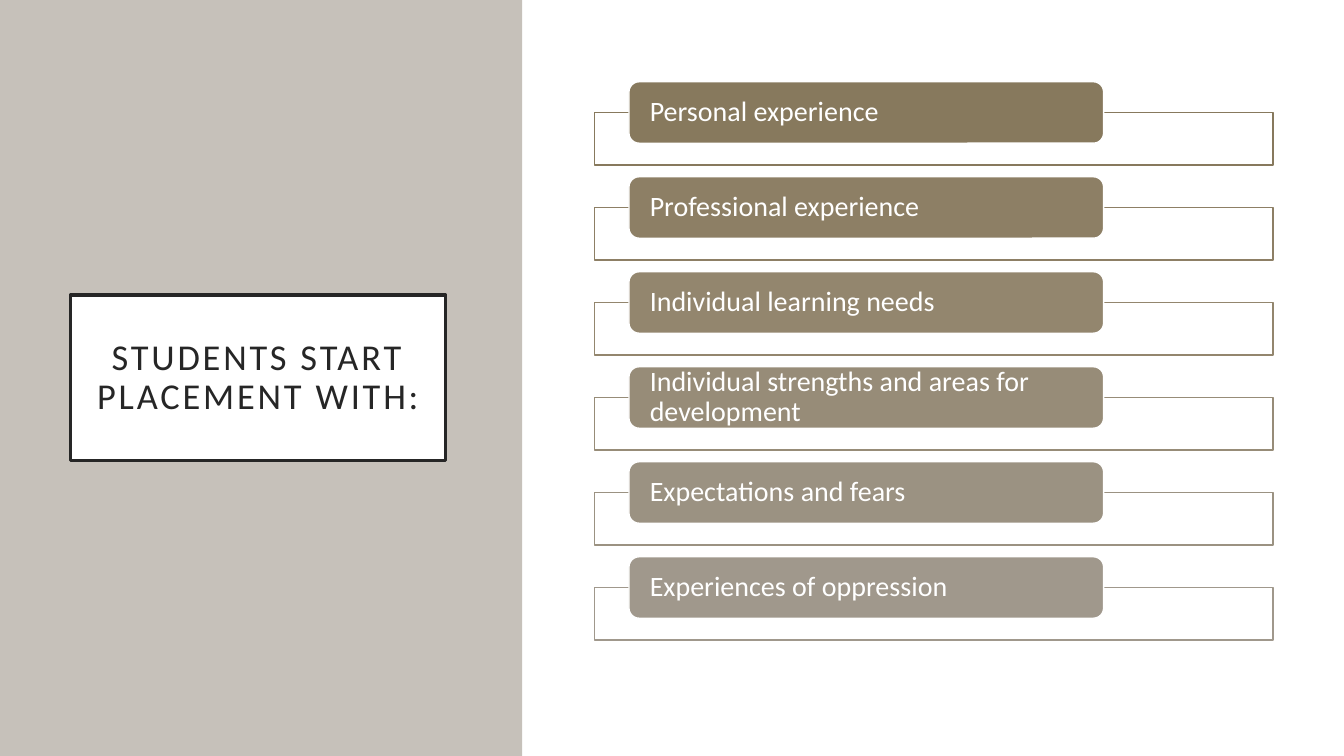
from dataclasses import dataclass

from lxml.etree import SubElement
from pptx import Presentation
from pptx.dml.color import RGBColor
from pptx.enum.shapes import MSO_SHAPE as Preset
from pptx.enum.text import MSO_ANCHOR as Anchor, PP_ALIGN as Align
from pptx.oxml.ns import qn
from pptx.util import Cm, Pt


@dataclass(frozen=True)
class Theme:
    font: str = "Calibri"
    white: str = "FFFFFF"
    ink: str = "262626"
    panel: str = "C6C1BA"
    rows: tuple = ("87795D", "8D7F65", "93866E", "978C78", "9B9282", "A0988C")
    title_size: int = 26
    item_size: int = 20
    title_line: float = 2.5
    row_line: float = 1
    title_tracking: int = 2


@dataclass(frozen=True)
class Box:
    """A rectangle measured in centimetres."""
    left: float
    top: float
    width: float
    height: float


THEME = Theme()
SLIDE = Box(0, 0, 33.87, 19.05)
TITLE_PANEL = Box(0, 0, 13.16, SLIDE.height)
LIST_PANEL = Box(13.21, 0, SLIDE.width - 13.21, SLIDE.height)
LIST = Box(14.99, 2.06, 17.09, 14.07)

TITLE = "STUDENTS START PLACEMENT WITH:"
ITEMS = (
    "Personal experience",
    "Professional experience",
    "Individual learning needs",
    "Individual strengths and areas for development",
    "Expectations and fears",
    "Experiences of oppression",
)


def add_block(page, box, fill, preset=Preset.RECTANGLE, line=None, weight=1, opacity=None):
    block = page.shapes.add_shape(
        preset, Cm(box.left), Cm(box.top), Cm(box.width), Cm(box.height))
    block.shadow.inherit = False
    block.fill.solid()
    block.fill.fore_color.rgb = RGBColor.from_string(fill)
    if opacity is not None:
        color = block.fill._xPr.find(qn("a:solidFill"))[0]
        SubElement(color, qn("a:alpha")).set("val", str(opacity * 1000))
    if line:
        block.line.color.rgb = RGBColor.from_string(line)
        block.line.width = Pt(weight)
    else:
        block.line.fill.background()
    return block


def write(shape, text, *, size, color, align=Align.LEFT, inset=(0, 0), tracking=0):
    """Fill a shape with one paragraph; inset is (horizontal, vertical) in cm."""
    frame = shape.text_frame
    frame.word_wrap = True
    frame.vertical_anchor = Anchor.MIDDLE
    frame.margin_left = frame.margin_right = Cm(inset[0])
    frame.margin_top = frame.margin_bottom = Cm(inset[1])
    para = frame.paragraphs[0]
    para.alignment = align
    para.line_spacing = 0.9
    span = para.add_run()
    span.text = text
    span.font.name = THEME.font
    span.font.size = Pt(size)
    span.font.color.rgb = RGBColor.from_string(color)
    if tracking:
        span._r.get_or_add_rPr().set("spc", str(tracking * 100))


def add_title_panel(page, box):
    add_block(page, box, THEME.panel)
    card_box = Box(box.left + 1.78, box.top + 7.44, 9.45, 4.17)
    card = add_block(page, card_box, THEME.white, line=THEME.ink, weight=THEME.title_line)
    write(card, TITLE, size=THEME.title_size, color=THEME.ink, align=Align.CENTER,
          inset=(0.5, 0.5), tracking=THEME.title_tracking)


def add_row(page, box, text, color):
    """Draw an outlined frame with a filled tab overlapping its top edge."""
    tab_height = 1.55
    drop = tab_height / 2
    frame_box = Box(box.left, box.top + drop, box.width, box.height - drop)
    add_block(page, frame_box, THEME.white, line=color, weight=THEME.row_line, opacity=90)
    tab_box = Box(box.left + 0.86, box.top, box.width * 0.7, tab_height)
    tab = add_block(page, tab_box, color, Preset.ROUNDED_RECTANGLE,
                    line=THEME.white, weight=THEME.row_line)
    write(tab, text, size=THEME.item_size, color=THEME.white, inset=(0.45, 0))


def add_list(page, box):
    row_height = 2.1
    pitch = (box.height - row_height) / (len(ITEMS) - 1)
    for index, (text, color) in enumerate(zip(ITEMS, THEME.rows)):
        row_box = Box(box.left, box.top + index * pitch, box.width, row_height)
        add_row(page, row_box, text, color)


def main():
    deck = Presentation()
    deck.slide_width, deck.slide_height = Cm(SLIDE.width), Cm(SLIDE.height)
    page = deck.slides.add_slide(deck.slide_layouts[6])
    add_title_panel(page, TITLE_PANEL)
    add_block(page, LIST_PANEL, THEME.white)
    add_list(page, LIST)
    deck.save("out.pptx")


if __name__ == "__main__":
    main()
